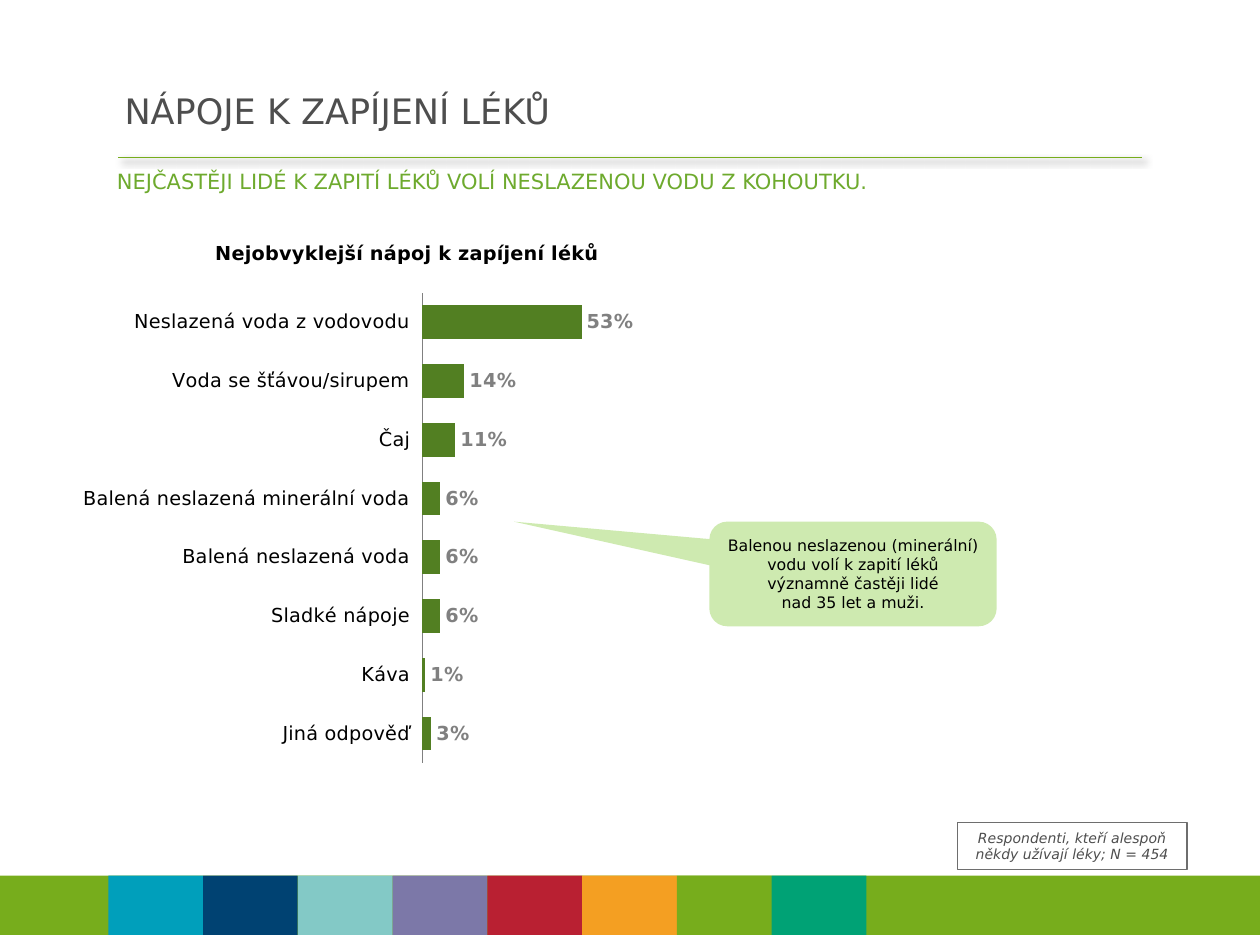
from lxml import etree
from pptx import Presentation
from pptx.chart.data import CategoryChartData
from pptx.dml.color import RGBColor
from pptx.enum.chart import XL_CHART_TYPE as CT, XL_LABEL_POSITION as LP, XL_TICK_LABEL_POSITION as TLP, XL_TICK_MARK as TM
from pptx.enum.shapes import MSO_CONNECTOR, MSO_SHAPE as SHAPE
from pptx.enum.text import MSO_ANCHOR as ANCHOR, PP_ALIGN as ALIGN
from pptx.oxml import parse_xml
from pptx.oxml.ns import nsdecls, qn
from pptx.util import Inches, Pt

FONT = "DejaVu Sans"
GREEN = "77AD1C"
DARK = "4E4E4E"


def rgb(value):
    return RGBColor.from_string(value)


def set_font(font, size, color=None, bold=False, italic=False):
    font.name, font.size, font.bold, font.italic = FONT, Pt(size), bold, italic
    if color:
        font.color.rgb = rgb(color)


def write(tf, text, size=11, color="000000", align=ALIGN.LEFT,
          anchor=ANCHOR.TOP, after=0, **style):
    """Fill a text frame with one paragraph; newlines become line breaks."""
    tf.word_wrap, tf.vertical_anchor = True, anchor
    p = tf.paragraphs[0]
    p.alignment, p.space_after = align, Pt(after)
    for i, line in enumerate(text.split("\n")):
        if i:
            p.add_line_break()
        r = p.add_run()
        r.text = line
        set_font(r.font, size, color, **style)


def place(parent, index, target, **shares):
    """Give a chart part a manual layout, in shares of the chart."""
    for old in parent.findall(qn("c:layout")):
        parent.remove(old)
    layout = parse_xml(f"<c:layout {nsdecls('c')}><c:manualLayout/></c:layout>")
    items = {"layoutTarget": target} if target else {}
    items.update(xMode="edge", yMode="edge", **shares)
    for name, value in items.items():
        etree.SubElement(layout[0], qn(f"c:{name}")).set("val", str(value))
    parent.insert(index, layout)


class Deck:
    """Current slide and its style; lengths are percent of width and height."""

    def __init__(self, width, height):
        self.prs = Presentation()
        self.prs.slide_width, self.prs.slide_height = Inches(width), Inches(height)
        self.s = self.prs.slides.add_slide(self.prs.slide_layouts[6])

    def box(self, *shares):
        sizes = (self.prs.slide_width, self.prs.slide_height) * 2
        return [int(size * share / 100) for size, share in zip(sizes, shares)]

    def text(self, at, text, **style):
        write(self.s.shapes.add_textbox(*self.box(*at)).text_frame, text, **style)

    def shape(self, at, kind=SHAPE.RECTANGLE, fill=None, line=None, adj=()):
        sp = self.s.shapes.add_shape(kind, *self.box(*at))
        sp.shadow.inherit = False
        for i, value in enumerate(adj):
            sp.adjustments[i] = value
        if fill:
            sp.fill.solid()
            sp.fill.fore_color.rgb = rgb(fill)
        else:
            sp.fill.background()
        if line:
            sp.line.color.rgb, sp.line.width = rgb(line), Pt(0.75)
        else:
            sp.line.fill.background()
        return sp

    def rule(self, ends, color):
        line = self.s.shapes.add_connector(MSO_CONNECTOR.STRAIGHT, *self.box(*ends))
        line.line.color.rgb, line.line.width = rgb(color), Pt(0.75)
        line._element.spPr.append(parse_xml(
            f'<a:effectLst {nsdecls("a")}><a:outerShdw blurRad="{Pt(4)}" dist="{Pt(3)}" '
            f'dir="{45 * 60000}" rotWithShape="0"><a:srgbClr val="000000">'
            '<a:alpha val="40000"/></a:srgbClr></a:outerShdw></a:effectLst>'))

    def bar_chart(self, at, title, values, color):
        data = CategoryChartData(number_format="0%")
        data.categories = list(values)
        data.add_series("Series 1", list(values.values()))
        chart = self.s.shapes.add_chart(CT.BAR_CLUSTERED, *self.box(*at), data).chart
        chart.has_legend = False
        set_font(chart.font, 18, "000000")

        # Title and plot area
        chart.has_title = True
        write(chart.chart_title.text_frame, title, bold=True)
        place(chart.chart_title._element, 1, None, x=0.185, y=0.03)
        place(chart._chartSpace.chart.plotArea, 0, "inner", x=0.477, y=0.13, w=0.416, h=0.829)

        # Axes
        cat, val = chart.category_axis, chart.value_axis
        cat.reverse_order = True
        cat.major_tick_mark = cat.minor_tick_mark = TM.NONE
        cat.tick_label_position = TLP.LOW
        cat.format.line.color.rgb = rgb("808080")
        cat.format.line.width = Pt(1)
        set_font(cat.tick_labels.font, 11, "000000")
        val.minimum_scale, val.maximum_scale = 0, 1
        val.has_major_gridlines = val.visible = False

        # Bars and their labels
        plot = chart.plots[0]
        plot.gap_width, plot.vary_by_categories = 75, False
        fill = plot.series[0].format.fill
        fill.solid()
        fill.fore_color.rgb = rgb(color)
        plot.has_data_labels = True
        labels = plot.data_labels
        labels.show_value, labels.position = True, LP.OUTSIDE_END
        labels.number_format, labels.number_format_is_linked = "0%", False
        set_font(labels.font, 11, "808080", bold=True)


def main():
    deck = Deck(10, 7.5)

    # Colour band along the bottom
    top, height, first, step = 92.67, 6.27, 8.6, 7.52
    deck.shape((0, top, 100, height), fill=GREEN)
    tiles = ("009FBB", "004272", "83C9C6", "7C78A8", "B92032", "F49F22", GREEN, "00A275")
    for i, color in enumerate(tiles):
        deck.shape((first + i * step, top, step, height), fill=color)

    # Heading
    deck.rule((9.4, 16.67, 90.6, 16.67), GREEN)
    deck.text((8.9, 8.27, 88.7, 6.8), "NÁPOJE K ZAPÍJENÍ LÉKŮ",
              size=20, color=DARK, anchor=ANCHOR.MIDDLE, after=3)
    deck.text((8.3, 17.2, 88.2, 7.33),
              "NEJČASTĚJI LIDÉ K ZAPITÍ LÉKŮ VOLÍ NESLAZENOU VODU Z KOHOUTKU.",
              size=12, color="6EAA2E")

    # Drinks chart
    drinks = {
        "Neslazená voda z vodovodu": 0.53,
        "Voda se šťávou/sirupem": 0.14,
        "Čaj": 0.11,
        "Balená neslazená minerální voda": 0.06,
        "Balená neslazená voda": 0.06,
        "Sladké nápoje": 0.06,
        "Káva": 0.01,
        "Jiná odpověď": 0.03,
    }
    deck.bar_chart((6.2, 23.2, 57.3, 60), "Nejobvyklejší nápoj k zapíjení léků",
                   drinks, "527F22")

    # Sample note and callout
    note = deck.shape((76, 87.07, 18.2, 4.93), line="6E6E6E")
    write(note.text_frame, "Respondenti, kteří alespoň někdy užívají léky; N = 454",
          size=8, color=DARK, align=ALIGN.CENTER, italic=True)
    callout = deck.shape((56.3, 55.2, 22.8, 11.07), SHAPE.ROUNDED_RECTANGULAR_CALLOUT,
                         fill="CEEAB0", adj=(-1.18, -0.5, 0.17))
    write(callout.text_frame,
          "Balenou neslazenou (minerální) vodu volí k zapití léků "
          "významně častěji lidé\nnad 35 let a muži.",
          size=9, align=ALIGN.CENTER, anchor=ANCHOR.MIDDLE)

    deck.prs.save("out.pptx")


if __name__ == "__main__":
    main()
